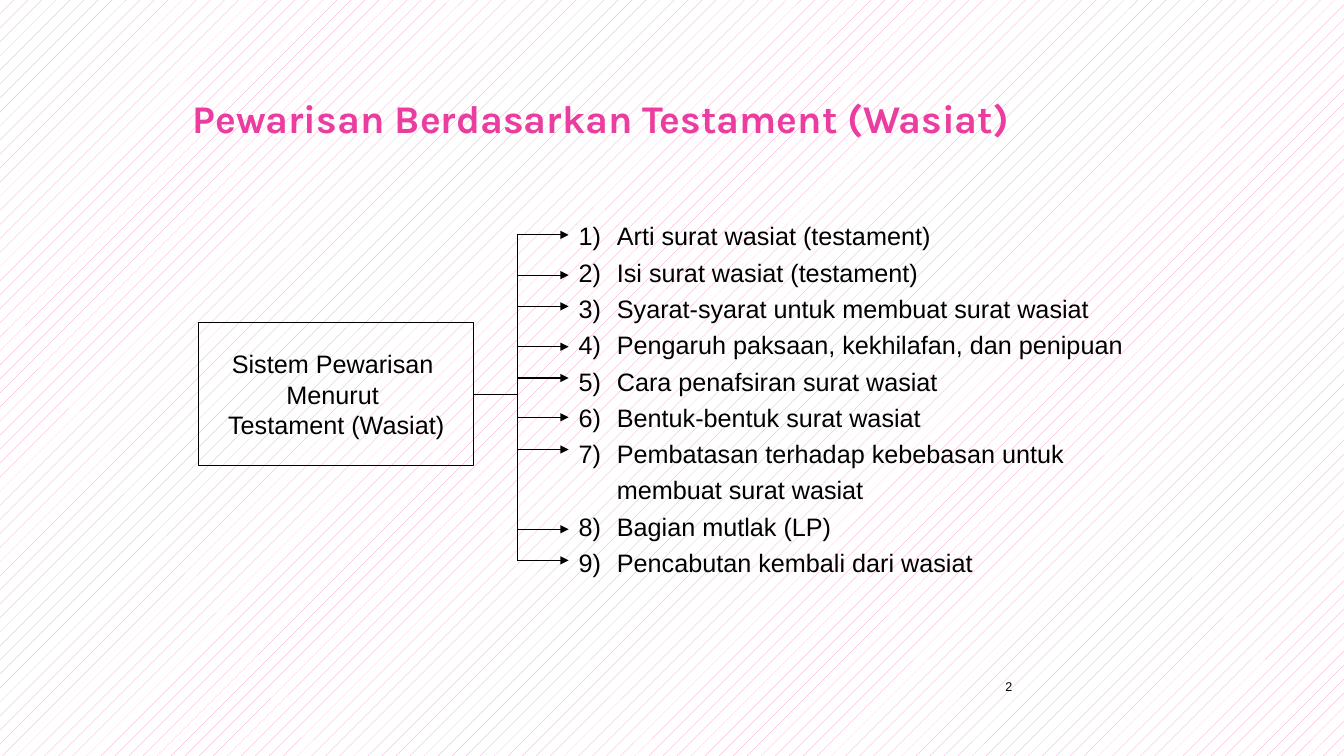
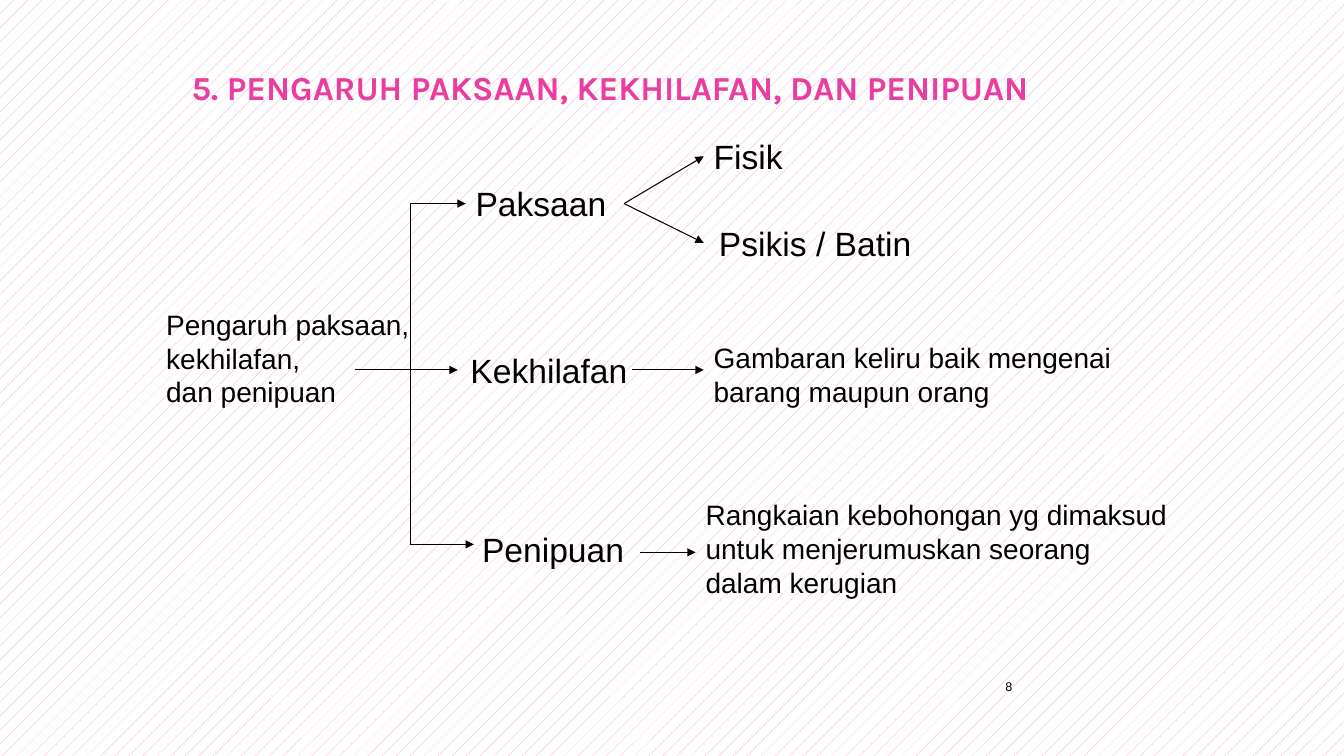
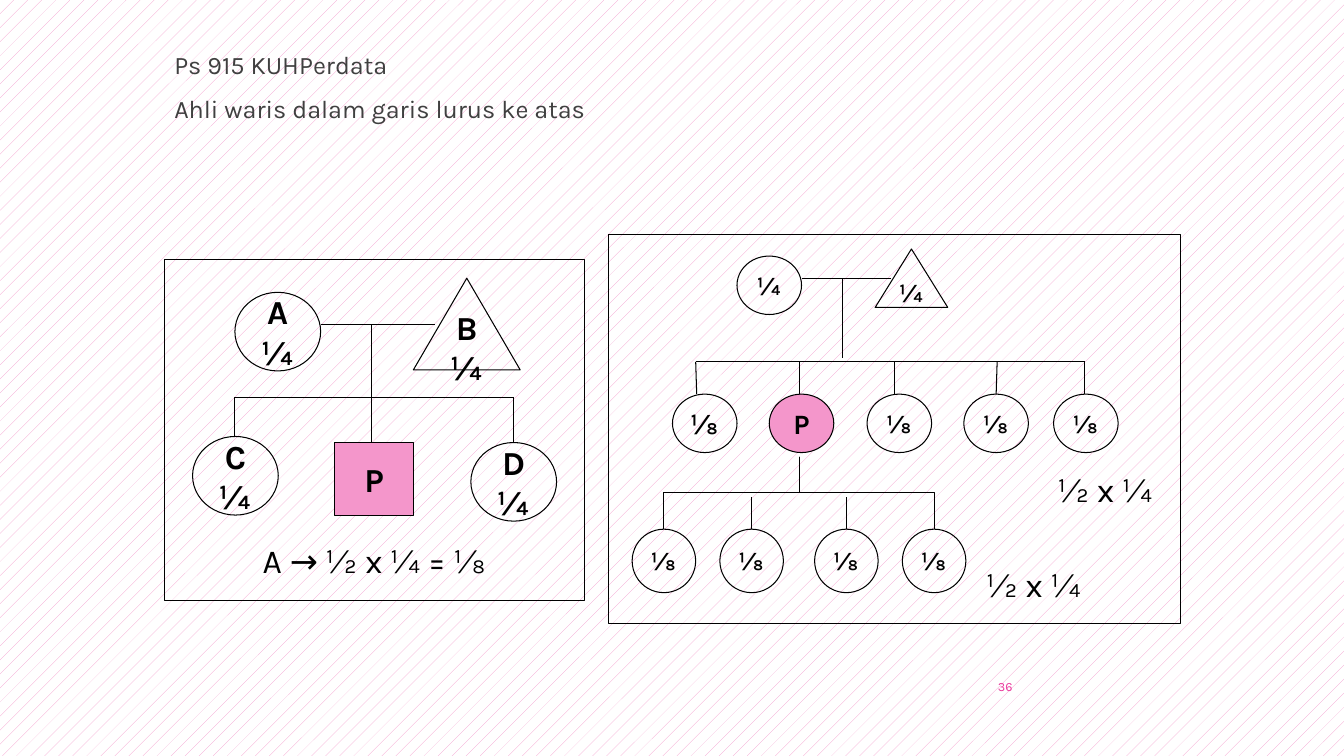
import pptx
import pptx.dml.color
import pptx.enum.dml
import pptx.enum.shapes
import pptx.enum.text
import pptx.oxml.ns
import pptx.util
from lxml import etree

Inches = pptx.util.Inches
Pt = pptx.util.Pt
qn = pptx.oxml.ns.qn
SHAPE = pptx.enum.shapes.MSO_SHAPE
ALIGN = pptx.enum.text.PP_ALIGN
ANCHOR = pptx.enum.text.MSO_ANCHOR

BLACK = "000000"
GRAY = "404040"
WHITE = "FFFFFF"
PINK = "F496CB"
MAGENTA = "EB3D9F"
BODY_FONT = "Arial"
DECK_FONT = "Karla"


def color(value):
    return pptx.dml.color.RGBColor.from_string(value)


def write_text(shape, text, size=18, font=BODY_FONT, ink=BLACK, bold=False,
               align=ALIGN.LEFT, anchor=ANCHOR.MIDDLE, wrap=False,
               line_spacing=None, space_before=None):
    frame = shape.text_frame
    frame.auto_size = pptx.enum.text.MSO_AUTO_SIZE.NONE
    frame.word_wrap = wrap
    frame.vertical_anchor = anchor
    for index, line in enumerate(text.split("\n")):
        paragraph = frame.add_paragraph() if index else frame.paragraphs[0]
        paragraph.text = line
        paragraph.alignment = align
        if line_spacing:
            paragraph.line_spacing = line_spacing
        if space_before:
            paragraph.space_before = Pt(space_before)
        for run in paragraph.runs:
            run.font.size = Pt(size)
            run.font.name = font
            run.font.bold = bold
            run.font.color.rgb = color(ink)


class Deck:
    line_width = Pt(0.75)

    def __init__(self):
        self.presentation = pptx.Presentation()
        self.presentation.slide_width = Inches(13.33)
        self.presentation.slide_height = Inches(7.5)
        fill = self.presentation.slide_master.background.fill
        fill.patterned()
        fill.pattern = pptx.enum.dml.MSO_PATTERN.PERCENT_5
        fill.fore_color.rgb = color(PINK)
        fill.back_color.rgb = color(WHITE)
        self.slide = None

    def add_slide(self, number, title=None, box=None, title_size=28,
                  number_font=BODY_FONT, number_ink=BLACK):
        layouts = self.presentation.slide_layouts
        layout = layouts.get_by_name("Title Only" if title else "Blank")
        self.slide = self.presentation.slides.add_slide(layout)
        if title:
            shape = self.slide.shapes.title
            shape.left, shape.top, shape.width, shape.height = map(Inches, box)
            write_text(shape, title, size=title_size, font=DECK_FONT, ink=MAGENTA,
                       bold=True, anchor=ANCHOR.TOP, wrap=True)
        self.text(number, 9.39, 6.61, 0.75, 0.4, size=9, font=number_font,
                  ink=number_ink, align=ALIGN.RIGHT, wrap=True)

    def text(self, text, left, top, width, height, **text_format):
        shape = self.slide.shapes.add_textbox(*map(Inches, (left, top, width, height)))
        write_text(shape, text, **text_format)
        return shape

    def numbered_list(self, items, left, top, width, height, indent, **text_format):
        shape = self.text("\n".join(items), left, top, width, height, **text_format)
        for properties in shape.element.iter(qn("a:pPr")):
            properties.set("marL", str(Inches(indent)))
            properties.set("indent", str(-Inches(indent)))
            etree.SubElement(properties, qn("a:buAutoNum"), type="arabicParenR")

    def shape(self, kind, left, top, width, height, text=None, fill=None, **text_format):
        shape = self.slide.shapes.add_shape(kind, *map(Inches, (left, top, width, height)))
        shape.shadow.inherit = False
        if fill:
            shape.fill.solid()
            shape.fill.fore_color.rgb = color(fill)
        else:
            shape.fill.background()
        shape.line.color.rgb = color(BLACK)
        shape.line.width = self.line_width
        if text:
            write_text(shape, text, align=ALIGN.CENTER, **text_format)
        return shape

    def person(self, kind, left, top, width, height, text, size=18, fill=None):
        return self.shape(kind, left, top, width, height, text, fill,
                          size=size, font=DECK_FONT, bold=True)

    def line(self, start_x, start_y, end_x, end_y, arrow=False):
        connector = self.slide.shapes.add_connector(
            pptx.enum.shapes.MSO_CONNECTOR.STRAIGHT,
            *map(Inches, (start_x, start_y, end_x, end_y)))
        connector.line.color.rgb = color(BLACK)
        connector.line.width = self.line_width
        properties = connector.element.spPr
        if arrow:
            etree.SubElement(properties.find(qn("a:ln")), qn("a:tailEnd"), type="triangle")
        etree.SubElement(properties, qn("a:effectLst"))
        return connector


def build_testament(deck):
    deck.add_slide("2", "Pewarisan Berdasarkan Testament (Wasiat)", (1.81, 0.89, 9.57, 0.97))
    system = deck.shape(SHAPE.RECTANGLE, 1.97, 3.2, 2.73, 1.42,
                        "Sistem Pewarisan \nMenurut \nTestament (Wasiat)")
    topics = [
        "Arti surat wasiat (testament)",
        "Isi surat wasiat (testament)",
        "Syarat-syarat untuk membuat surat wasiat",
        "Pengaruh paksaan, kekhilafan, dan penipuan",
        "Cara penafsiran surat wasiat",
        "Bentuk-bentuk surat wasiat",
        "Pembatasan terhadap kebebasan untuk\vmembuat surat wasiat",
        "Bagian mutlak (LP)",
        "Pencabutan kembali dari wasiat",
    ]
    deck.numbered_list(topics, 5.64, 2.08, 5.97, 3.7, indent=0.38, line_spacing=1.2)
    trunk = 5.13
    arrow_tops = [2.33, 2.73, 3.04, 3.44, 3.75, 4.14, 4.46, 5.25, 5.56]
    deck.line(4.7, 3.91, trunk, 3.91).begin_connect(system, 3)
    deck.line(trunk, arrow_tops[0], trunk, arrow_tops[-1])
    for top in arrow_tops:
        deck.line(trunk, top, 5.64, top, arrow=True)


def build_influences(deck):
    deck.add_slide("8", "5. PENGARUH PAKSAAN, KEKHILAFAN, DAN PENIPUAN",
                   (1.8, 0.61, 9.58, 0.6), title_size=24)
    for text, *box in [
        ("Paksaan", 4.46, 1.7, 1.81, 0.63),
        ("Psikis / Batin", 6.98, 2.1, 2.21, 0.63),
        ("Kekhilafan", 4.38, 3.36, 2.13, 0.63),
        ("Penipuan", 4.54, 5.09, 1.89, 0.71),
    ]:
        deck.text(text, *box, size=24, align=ALIGN.CENTER)
    deck.text("Fisik", 6.98, 1.31, 1.73, 0.47, size=24)
    for text, *box in [
        ("Pengaruh paksaan,\nkekhilafan,\ndan penipuan", 1.55, 2.88, 2.36, 1.34),
        ("Gambaran keliru baik mengenai\nbarang maupun orang", 6.98, 3.28, 4.33, 0.87),
        ("Rangkaian kebohongan yg dimaksud\nuntuk menjerumuskan seorang\ndalam kerugian",
         6.9, 4.77, 4.8, 1.34),
    ]:
        deck.text(text, *box, size=20)
    deck.line(4.07, 2.02, 4.07, 5.4)
    for ends in [
        (3.52, 3.67, 4.54, 3.67),
        (4.07, 5.4, 4.7, 5.4),
        (4.07, 2.02, 4.62, 2.02),
        (6.19, 2.02, 6.98, 1.55),
        (6.19, 2.02, 6.98, 2.41),
        (6.27, 3.67, 6.98, 3.67),
        (6.35, 5.48, 6.9, 5.48),
    ]:
        deck.line(*ends, arrow=True)


def draw_small_family(deck):
    deck.shape(SHAPE.RECTANGLE, 1.63, 2.57, 4.17, 3.39)
    for name, left, top in [("A", 2.33, 2.9), ("C", 1.91, 4.33), ("D", 4.67, 4.39)]:
        deck.person(SHAPE.OVAL, left, top, 0.85, 0.78, name + "\n¼", size=24)
    deck.person(SHAPE.ISOSCELES_TRIANGLE, 4.1, 2.76, 1.06, 0.91, "B\n¼", size=24)
    deck.person(SHAPE.RECTANGLE, 3.32, 4.39, 0.78, 0.72, "P", size=24, fill=PINK)
    for ends in [
        (3.18, 3.22, 4.31, 3.22),
        (2.33, 3.94, 5.09, 3.94),
        (3.68, 3.22, 3.68, 4.39),
        (2.33, 3.94, 2.33, 4.33),
        (5.09, 3.94, 5.09, 4.39),
    ]:
        deck.line(*ends)
    deck.text("A → ½ x ¼ = ⅛", 2.4, 5.3, 2.62, 0.52, size=24, font=DECK_FONT,
              align=ALIGN.CENTER)


def draw_large_family(deck):
    deck.shape(SHAPE.RECTANGLE, 6.04, 2.33, 5.67, 3.86)
    deck.person(SHAPE.OVAL, 7.31, 2.54, 0.64, 0.58, "¼")
    deck.person(SHAPE.ISOSCELES_TRIANGLE, 8.68, 2.47, 0.72, 0.58, "¼")
    deck.line(7.95, 2.76, 8.84, 2.76)
    deck.line(8.36, 2.76, 8.36, 3.55)
    deck.line(6.9, 3.59, 10.76, 3.59)
    for left, text, size, fill, branch_top, branch_bottom in [
        (6.67, "⅛", 20, None, 6.9, 6.91),
        (7.63, "P", 20, PINK, 7.93, 7.93),
        (8.6, "⅛", 18, None, 8.87, 8.87),
        (9.56, "⅛", 18, None, 9.89, 9.88),
        (10.45, "⅛", 18, None, 10.76, 10.76),
    ]:
        deck.person(SHAPE.OVAL, left, 3.91, 0.64, 0.58, text, size, fill)
        deck.line(branch_top, 3.59, branch_bottom, 3.91)
    brace = deck.shape(SHAPE.RIGHT_BRACE, 7.57, 3.55, 0.71, 2.68)
    brace.rotation = 270
    brace.adjustments[0] = 0
    brace.adjustments[1] = 0.5
    for left in (6.27, 7.14, 8.08, 8.95):
        deck.person(SHAPE.OVAL, left, 5.25, 0.63, 0.63, "⅛")
    for x in (7.45, 8.4):
        deck.line(x, 5.25, x, 4.93)
    for left, top, width in [(9.66, 5.56, 1.26), (10.45, 4.62, 1.1)]:
        deck.text("½ x ¼ ", left, top, width, 0.47, size=24, font=DECK_FONT,
                  align=ALIGN.CENTER)


def build_ascendants(deck):
    deck.add_slide("36", number_font=DECK_FONT, number_ink=MAGENTA)
    deck.text("Ps 915 KUHPerdata\nAhli waris dalam garis lurus ke atas",
              1.63, 0.44, 10.08, 6.61, font=DECK_FONT, ink=GRAY,
              anchor=ANCHOR.TOP, wrap=True, space_before=10)
    draw_small_family(deck)
    draw_large_family(deck)


def main():
    deck = Deck()
    build_testament(deck)
    build_influences(deck)
    build_ascendants(deck)
    deck.presentation.save("out.pptx")


if __name__ == "__main__":
    main()
